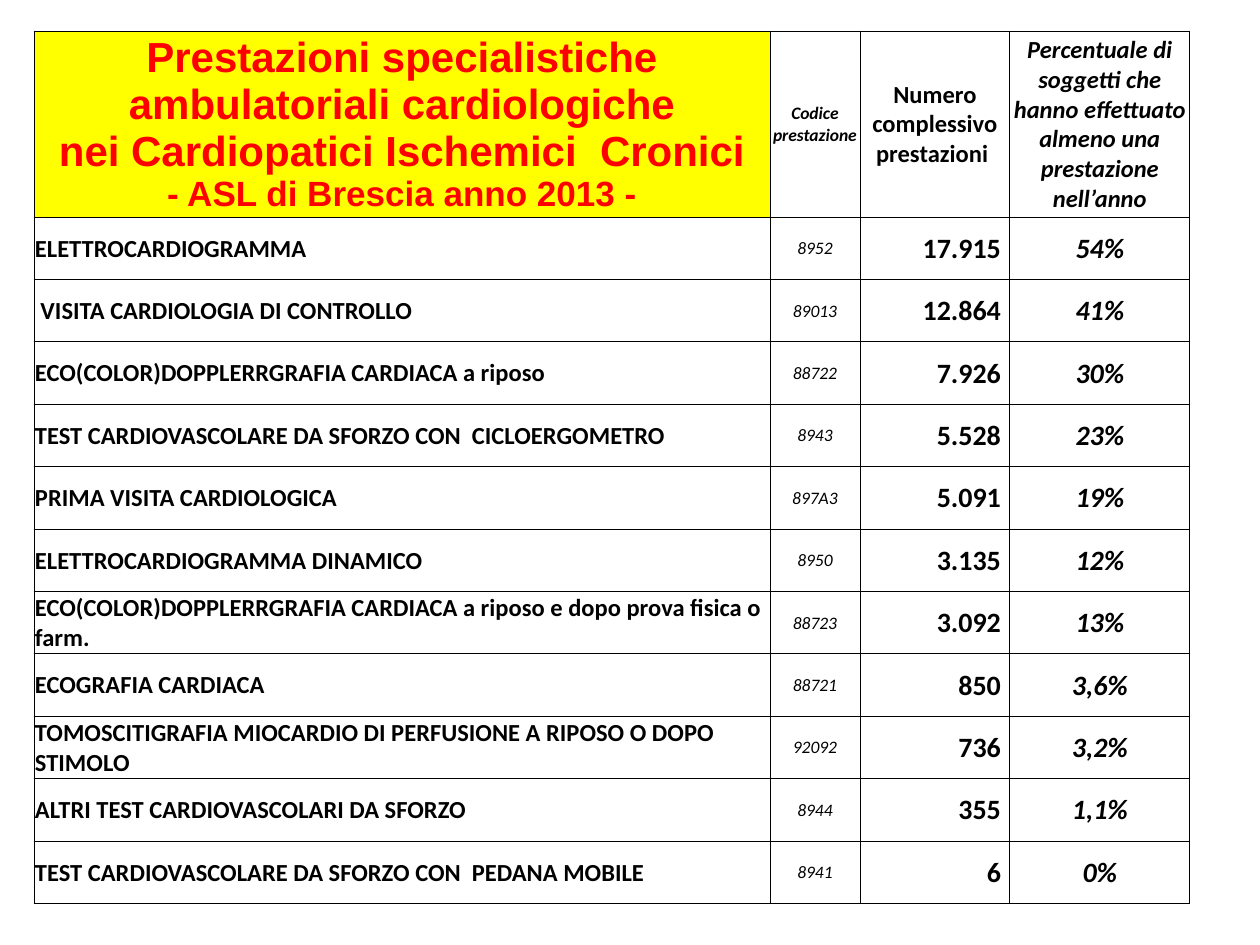
"""Build the slide with the table of outpatient cardiology services."""
from lxml import etree
from pptx import Presentation
from pptx.dml.color import RGBColor
from pptx.enum.text import MSO_ANCHOR, PP_ALIGN
from pptx.oxml.ns import qn
from pptx.util import Emu, Pt

LEFT, CENTER, RIGHT = PP_ALIGN.LEFT, PP_ALIGN.CENTER, PP_ALIGN.RIGHT
MIDDLE = MSO_ANCHOR.MIDDLE
PX = 914400 // 126
COLORS = {"text": "000000", "title": "FF0000", "title_fill": "FFFF00",
          "cell_fill": "FFFFFF", "border": "000000"}

TITLE_LINES = [
    ("Prestazioni specialistiche ambulatoriali cardiologiche", 24),
    ("nei Cardiopatici Ischemici  Cronici", 24),
    ("- ASL di Brescia anno 2013 -", 20),
]
HEADINGS = [
    ("Codice prestazione", 10, True),
    ("Numero complessivo prestazioni ", 14, False),
    ("Percentuale di soggetti che hanno effettuato almeno una prestazione nell’anno", 14, True),
]
SERVICES = [
    ("ELETTROCARDIOGRAMMA", "8952", "17.915", "54%"),
    (" VISITA CARDIOLOGIA DI CONTROLLO", "89013", "12.864", "41%"),
    ("ECO(COLOR)DOPPLERRGRAFIA CARDIACA a riposo", "88722", "7.926", "30%"),
    ("TEST CARDIOVASCOLARE DA SFORZO CON  CICLOERGOMETRO", "8943", "5.528", "23%"),
    ("PRIMA VISITA CARDIOLOGICA", "897A3", "5.091", "19%"),
    ("ELETTROCARDIOGRAMMA DINAMICO", "8950", "3.135", "12%"),
    ("ECO(COLOR)DOPPLERRGRAFIA CARDIACA a riposo e dopo prova fisica o farm.",
     "88723", "3.092", "13%"),
    ("ECOGRAFIA CARDIACA", "88721", "850", "3,6%"),
    ("TOMOSCITIGRAFIA MIOCARDIO DI PERFUSIONE A RIPOSO O DOPO STIMOLO",
     "92092", "736", "3,2%"),
    ("ALTRI TEST CARDIOVASCOLARI DA SFORZO", "8944", "355", "1,1%"),
    ("TEST CARDIOVASCOLARE DA SFORZO CON  PEDANA MOBILE", "8941", "6", "0%"),
]
COLUMN_STYLES = [
    {"size": 14, "align": LEFT},
    {"size": 10, "bold": False, "italic": True},
    {"size": 16, "align": RIGHT, "margin_right": 9},
    {"size": 16, "italic": True},
]
TABLE_LEFT, TABLE_TOP = 34, 31
COLUMN_WIDTHS = [736, 90, 150, 180]
HEADER_HEIGHT, BODY_HEIGHT = 186, 687


def px(length):
    return Emu(length * PX)


def add_borders(cell):
    properties = cell._tc.get_or_add_tcPr()
    for position, side in enumerate(("a:lnL", "a:lnR", "a:lnT", "a:lnB")):
        border = etree.Element(qn(side), w=str(Pt(0.5)))
        fill = etree.SubElement(border, qn("a:solidFill"))
        etree.SubElement(fill, qn("a:srgbClr"), val=COLORS["border"])
        properties.insert(position, border)


def style_cell(cell, size, bold=True, italic=False, align=CENTER, margin_right=1,
               font="Calibri", color="text", fill="cell_fill"):
    cell.fill.solid()
    cell.fill.fore_color.rgb = RGBColor.from_string(COLORS[fill])
    add_borders(cell)
    cell.vertical_anchor = MIDDLE
    cell.margin_left = cell.margin_top = px(1)
    cell.margin_right, cell.margin_bottom = px(margin_right), 0
    paragraph = cell.text_frame.paragraphs[0]
    paragraph.alignment = align
    paragraph.font.name = font
    paragraph.font.size = Pt(size)
    paragraph.font.bold = bold
    paragraph.font.italic = italic
    paragraph.font.color.rgb = RGBColor.from_string(COLORS[color])


def fill_title(cell):
    paragraph = cell.text_frame.paragraphs[0]
    for number, (line, size) in enumerate(TITLE_LINES):
        if number:
            paragraph.add_line_break()
        run = paragraph.add_run()
        run.text = line
        run.font.size = Pt(size)
    style_cell(cell, 24, font="Arial", color="title", fill="title_fill")


def main():
    prs = Presentation()
    prs.slide_width, prs.slide_height = px(1260), px(945)
    slide = prs.slides.add_slide(prs.slide_layouts[6])
    table = slide.shapes.add_table(
        len(SERVICES) + 1, len(COLUMN_WIDTHS), px(TABLE_LEFT), px(TABLE_TOP),
        px(sum(COLUMN_WIDTHS)), px(HEADER_HEIGHT + BODY_HEIGHT)).table
    table.first_row = table.horz_banding = False
    for column, width in zip(table.columns, COLUMN_WIDTHS):
        column.width = px(width)
    table.rows[0].height = px(HEADER_HEIGHT)

    fill_title(table.cell(0, 0))
    for column, (heading, size, italic) in enumerate(HEADINGS, 1):
        cell = table.cell(0, column)
        cell.text = heading
        style_cell(cell, size, italic=italic)

    for row, service in enumerate(SERVICES, 1):
        table.rows[row].height = Emu(px(BODY_HEIGHT) // len(SERVICES))
        for column, (value, style) in enumerate(zip(service, COLUMN_STYLES)):
            cell = table.cell(row, column)
            cell.text = value
            style_cell(cell, **style)

    prs.save("out.pptx")


if __name__ == "__main__":
    main()
